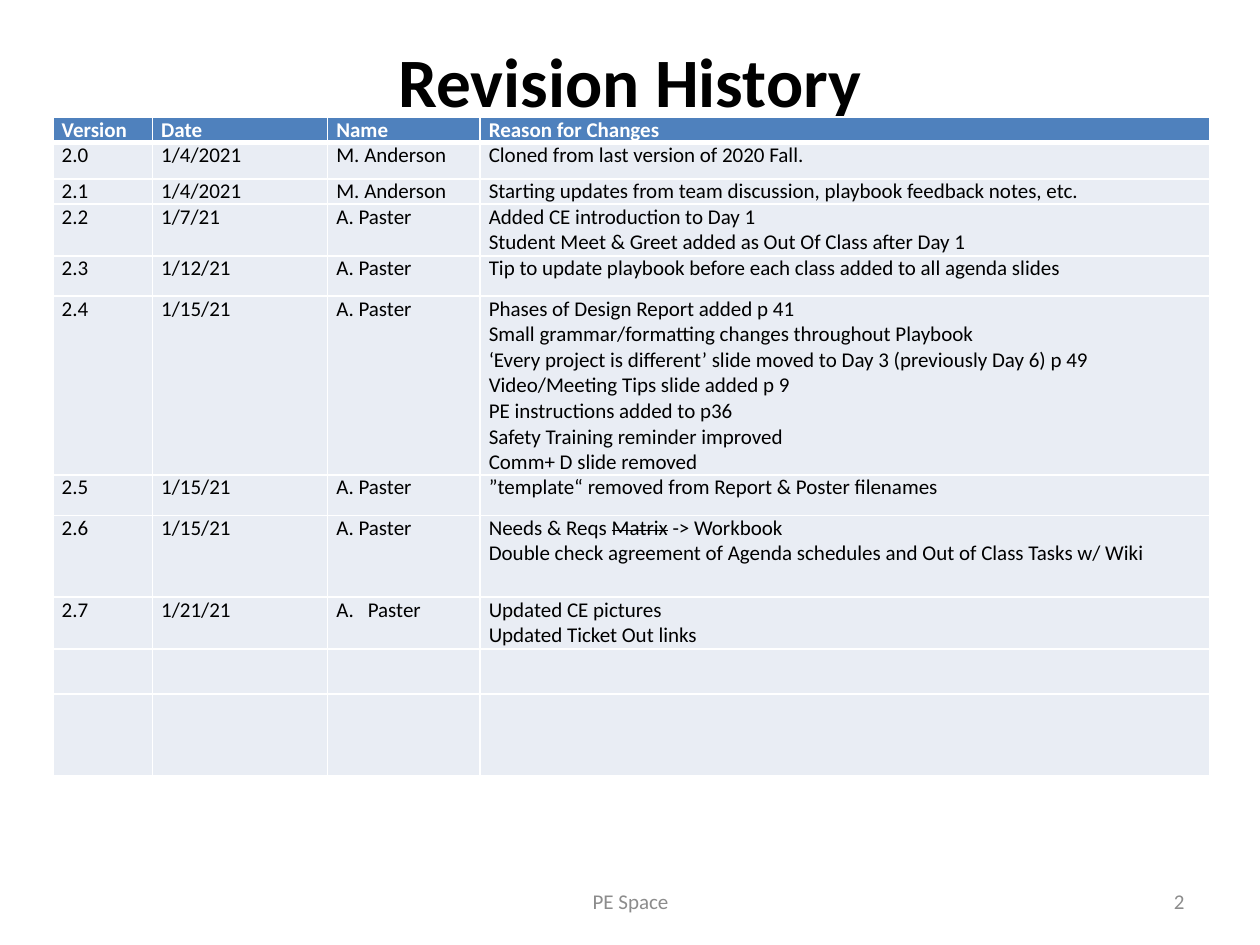
from lxml import etree
from pptx import Presentation
from pptx import util as u
from pptx.dml.color import RGBColor
from pptx.enum import text
from pptx.oxml import ns

BLACK = RGBColor(0x00, 0x00, 0x00)
WHITE = RGBColor(0xFF, 0xFF, 0xFF)
GRAY = RGBColor(0x8C, 0x8C, 0x8C)
BLUE = RGBColor(0x4F, 0x81, 0xBD)
PALE = RGBColor(0xE9, 0xED, 0xF4)


def write(tf, content, size=12, color=BLACK, bold=False, align=text.PP_ALIGN.LEFT):
    """One paragraph per line; words between ~ marks are struck through."""
    for i, line in enumerate(content.split("\n")):
        p = tf.paragraphs[0] if i == 0 else tf.add_paragraph()
        p.alignment = align
        for j, part in enumerate(line.split("~")):
            r = p.add_run()
            r.text = part
            r.font.name = "Calibri"
            r.font.size = u.Pt(size)
            r.font.bold = bold
            r.font.color.rgb = color
            if j % 2:
                r.font._element.set("strike", "sngStrike")


def add_border(tc_pr, side, width):
    ln = etree.SubElement(tc_pr, ns.qn("a:ln" + side), w=str(u.Pt(width)))
    fill = etree.SubElement(ln, ns.qn("a:solidFill"))
    etree.SubElement(fill, ns.qn("a:srgbClr"), val=str(WHITE))


prs = Presentation()
prs.slide_width, prs.slide_height = u.Inches(10), u.Inches(7.5)
s = prs.slides.add_slide(prs.slide_layouts[6])

# Title and footer
CENTER, RIGHT = text.PP_ALIGN.CENTER, text.PP_ALIGN.RIGHT
TOP, MIDDLE = text.MSO_ANCHOR.TOP, text.MSO_ANCHOR.MIDDLE
labels = [
    ("Revision History", (0.5, 0.3, 9, 1.25), TOP, dict(size=39.6, bold=True, align=CENTER)),
    ("PE Space", (3.42, 6.95, 3.17, 0.4), MIDDLE, dict(color=GRAY, align=CENTER)),
    ("2", (7.17, 6.95, 2.33, 0.4), MIDDLE, dict(color=GRAY, align=RIGHT)),
]
for content, box, anchor, style in labels:
    tf = s.shapes.add_textbox(*map(u.Inches, box)).text_frame
    tf.word_wrap = True
    tf.vertical_anchor = anchor
    tf.margin_top = tf.margin_bottom = 0
    write(tf, content, **style)

# Revision table: row height, then the cell texts
rows = [
    (0.2, "Version", "Date", "Name", "Reason for Changes"),
    (0.29, "2.0", "1/4/2021", "M. Anderson", "Cloned from last version of 2020 Fall."),
    (0.2, "2.1", "1/4/2021", "M. Anderson",
     "Starting updates from team discussion, playbook feedback notes, etc."),
    (0.41, "2.2", "1/7/21", "A. Paster",
     "Added CE introduction to Day 1\n"
     "Student Meet & Greet added as Out Of Class after Day 1"),
    (0.32, "2.3", "1/12/21", "A. Paster",
     "Tip to update playbook before each class added to all agenda slides"),
    (1.42, "2.4", "1/15/21", "A. Paster",
     "Phases of Design Report added p 41\n"
     "Small grammar/formatting changes throughout Playbook\n"
     "‘Every project is different’ slide moved to Day 3 (previously Day 6) p 49\n"
     "Video/Meeting Tips slide added p 9\n"
     "PE instructions added to p36\n"
     "Safety Training reminder improved\n"
     "Comm+ D slide removed"),
    (0.32, "2.5", "1/15/21", "A. Paster", "”template“ removed from Report & Poster filenames"),
    (0.65, "2.6", "1/15/21", "A. Paster",
     "Needs & Reqs ~Matrix~ -> Workbook\n"
     "Double check agreement of Agenda schedules and Out of Class Tasks w/ Wiki"),
    (0.41, "2.7", "1/21/21", "Paster", "Updated CE pictures\nUpdated Ticket Out links"),
    (0.36, "", "", "", ""),
    (0.65, "", "", "", ""),
]
widths = [0.79, 1.39, 1.21, 5.79]
height = sum(row[0] for row in rows)
table = s.shapes.add_table(len(rows), len(widths), u.Inches(0.42), u.Inches(0.93),
                           u.Inches(sum(widths)), u.Inches(height)).table
table.horz_banding = False
for col, width in zip(table.columns, widths):
    col.width = u.Inches(width)

for i, (row_height, *cells) in enumerate(rows):
    table.rows[i].height = u.Inches(row_height)
    header = i == 0
    for j, content in enumerate(cells):
        cell = table.cell(i, j)
        cell.margin_left = cell.margin_right = u.Inches(0.07)
        cell.margin_top = cell.margin_bottom = 0
        tc_pr = cell._tc.get_or_add_tcPr()
        for side in "LRTB":
            thick = (header and side == "B") or (i == 1 and side == "T")
            add_border(tc_pr, side, 3 if thick else 1)
        cell.fill.solid()
        cell.fill.fore_color.rgb = BLUE if header else PALE
        if content:
            write(cell.text_frame, content, color=WHITE if header else BLACK, bold=header)

# Lettered list item in the 2.7 row
p_pr = table.cell(8, 2).text_frame.paragraphs[0]._p.get_or_add_pPr()
p_pr.set("marL", str(u.Inches(0.25)))
p_pr.set("indent", str(u.Inches(-0.25)))
etree.SubElement(p_pr, ns.qn("a:buFont"), typeface="+mj-lt")
etree.SubElement(p_pr, ns.qn("a:buAutoNum"), type="alphaUcPeriod")

prs.save("out.pptx")
